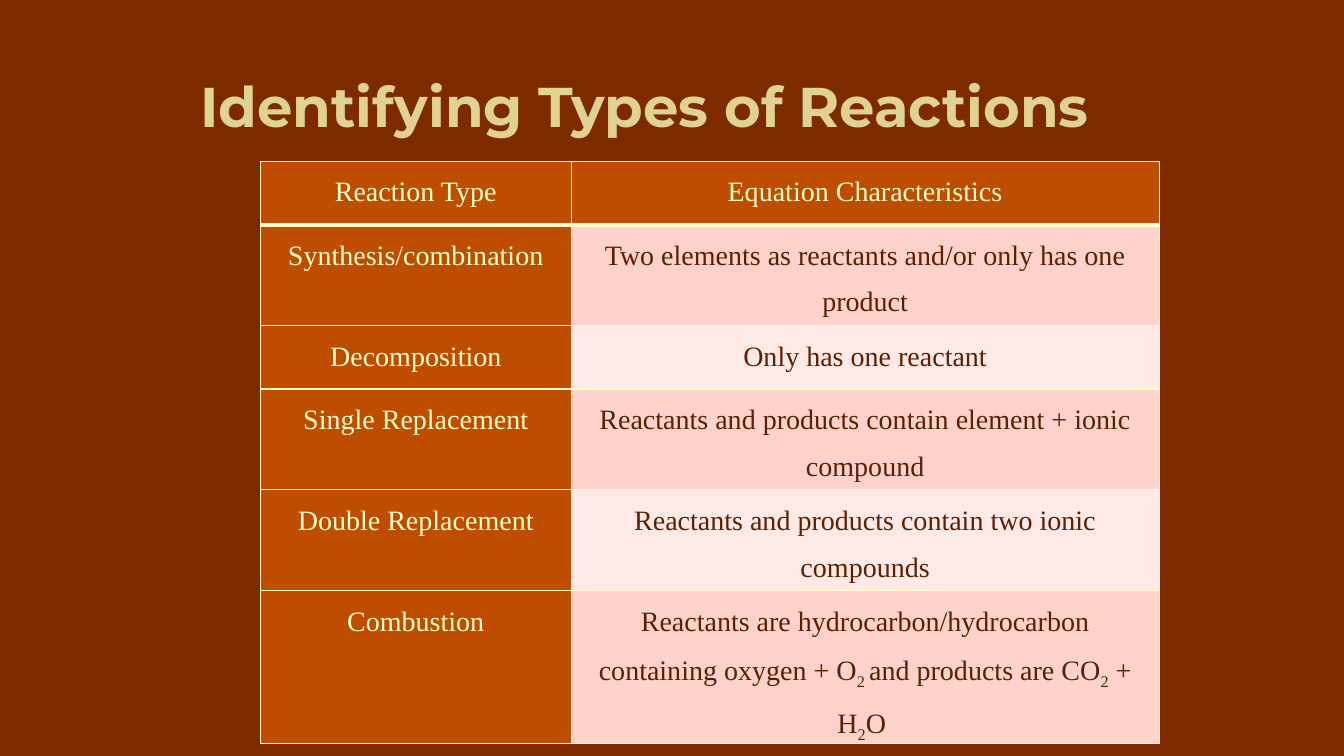
"""Build a slide with a table of reaction types and their equation characteristics."""
import lxml.etree
import pptx
import pptx.dml.color
import pptx.enum.text
import pptx.oxml.ns
import pptx.util

Pt = pptx.util.Pt
RGBColor = pptx.dml.color.RGBColor

BACKGROUND = RGBColor(0x7E, 0x2A, 0x00)
GOLD = RGBColor(0xDF, 0xD2, 0x93)
CREAM = RGBColor(0xFF, 0xFF, 0xCC)
ORANGE = RGBColor(0xBF, 0x4D, 0x00)
BROWN = RGBColor(0x5C, 0x1F, 0x00)
PINK = RGBColor(0xFF, 0xD3, 0xCC)
PALE_PINK = RGBColor(0xFF, 0xEA, 0xE7)

SUBSCRIPT_MARK = "~"
COLUMN_WIDTHS = (222, 420)
ROWS = (
    (45.36, "Reaction Type", "Equation Characteristics"),
    (72, "Synthesis/combination", "Two elements as reactants and/or only has one product"),
    (45.36, "Decomposition", "Only has one reactant"),
    (72, "Single Replacement", "Reactants and products contain element + ionic compound"),
    (72, "Double Replacement", "Reactants and products contain two ionic compounds"),
    (108, "Combustion",
     "Reactants are hydrocarbon/hydrocarbon containing oxygen + O~2 ~and products are CO~2~ + H~2~O "),
)


def set_font(para, name, size, color, bold):
    """Set the font shared by all runs of a paragraph."""
    para.font.name = name
    para.font.size = Pt(size)
    para.font.bold = bold
    para.font.color.rgb = color


def add_title(slide, text):
    """Fill and place the title placeholder."""
    title = slide.shapes.title
    title.left, title.top, title.width, title.height = Pt(136), Pt(36), Pt(752), Pt(78)
    title.text_frame.text = text
    title.text_frame.vertical_anchor = pptx.enum.text.MSO_ANCHOR.MIDDLE
    para = title.text_frame.paragraphs[0]
    para.alignment = pptx.enum.text.PP_ALIGN.LEFT
    set_font(para, "Montserrat", 40, GOLD, True)


def add_borders(cell, bottom_width):
    """Draw cream lines around a cell."""
    properties = cell._tc.get_or_add_tcPr()
    qn = pptx.oxml.ns.qn
    for side, width in (("L", 1), ("R", 1), ("T", 1), ("B", bottom_width)):
        line = lxml.etree.SubElement(properties, qn(f"a:ln{side}"), w=str(Pt(width)))
        fill = lxml.etree.SubElement(line, qn("a:solidFill"))
        lxml.etree.SubElement(fill, qn("a:srgbClr"), val=str(CREAM))


def fill_cell(cell, text, fill_color, text_color, bottom_width):
    """Format a cell and write its text, with marked parts as subscripts."""
    add_borders(cell, bottom_width)
    cell.fill.solid()
    cell.fill.fore_color.rgb = fill_color
    cell.margin_left = cell.margin_right = Pt(5)
    cell.margin_top = cell.margin_bottom = Pt(0)
    para = cell.text_frame.paragraphs[0]
    para.alignment = pptx.enum.text.PP_ALIGN.CENTER
    para.line_spacing = 1.5
    set_font(para, "Times New Roman", 20, text_color, False)
    for index, part in enumerate(text.split(SUBSCRIPT_MARK)):
        span = para.add_run()
        span.text = part
        if index % 2:
            span._r.get_or_add_rPr().set("baseline", "-25000")


def add_reaction_table(slide):
    """Add the table with a header row, a label column and banded cells."""
    height = sum(row[0] for row in ROWS)
    frame = slide.shapes.add_table(len(ROWS), len(COLUMN_WIDTHS), Pt(186), Pt(115.2),
                                   Pt(sum(COLUMN_WIDTHS)), Pt(height))
    table = frame.table
    table.first_row = table.horz_banding = False
    for column, width in zip(table.columns, COLUMN_WIDTHS):
        column.width = Pt(width)
    for row_index, (row_height, *texts) in enumerate(ROWS):
        table.rows[row_index].height = Pt(row_height)
        band = PINK if row_index % 2 else PALE_PINK
        for column_index, text in enumerate(texts):
            is_heading = row_index == 0 or column_index == 0
            fill_color, text_color = (ORANGE, CREAM) if is_heading else (band, BROWN)
            bottom_width = 3 if row_index == 0 else 1
            fill_cell(table.cell(row_index, column_index), text,
                      fill_color, text_color, bottom_width)


def main():
    """Build and save the deck."""
    deck = pptx.Presentation()
    deck.slide_width, deck.slide_height = Pt(960), Pt(540)
    slide = deck.slides.add_slide(deck.slide_layouts.get_by_name("Title Only"))
    slide.background.fill.solid()
    slide.background.fill.fore_color.rgb = BACKGROUND
    add_title(slide, "Identifying Types of Reactions")
    add_reaction_table(slide)
    deck.save("out.pptx")


if __name__ == "__main__":
    main()
